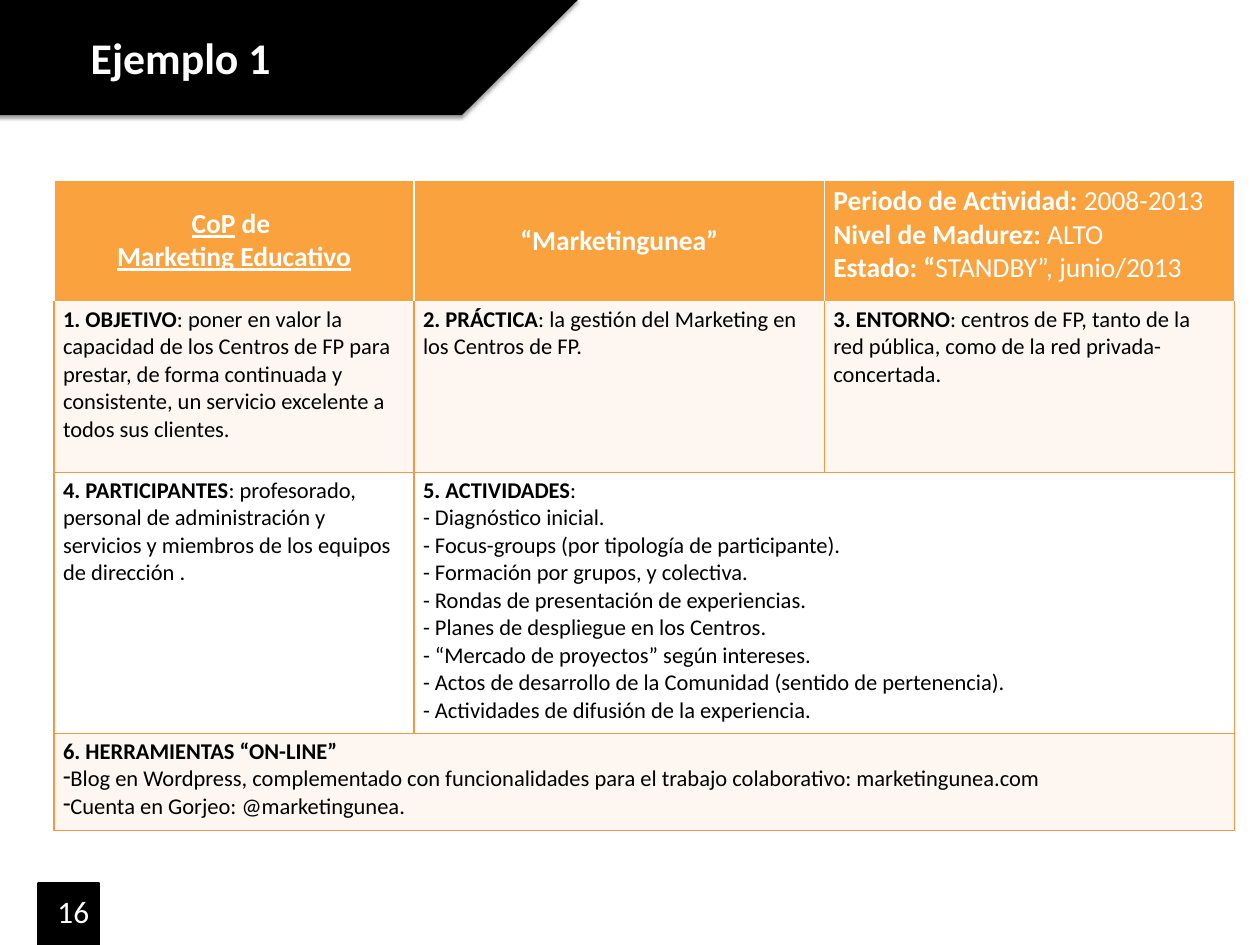
from lxml.etree import SubElement
from pptx import Presentation
from pptx.dml.color import RGBColor
from pptx.enum.shapes import MSO_SHAPE
from pptx.enum.text import MSO_ANCHOR, PP_ALIGN
from pptx.oxml.ns import qn
from pptx.util import Inches, Pt

UNIT = Inches(0.1)
COLS, ROWS = 140, 105
BLACK, WHITE, AMBER, ORANGE, PEACH = "000000", "FFFFFF", "FAA23E", "F79646", "FCD5B5"
FONT = "Calibri"

HEADINGS = [
    [[("CoP", "bu"), (" de ", "b"), ("\n", ""), ("Marketing Educativo", "bu")]],
    [[("“Marketingunea”", "b")]],
    [[("Periodo de Actividad: ", "b"), ("2008-2013", "")],
     [("Nivel de Madurez: ", "b"), ("ALTO", "")],
     [("Estado: “", "b"), ("STANDBY”, junio/2013", "")]],
]
ACTIVITIES = [
    "Diagnóstico inicial.",
    "Focus-groups (por tipología de participante).",
    "Formación por grupos, y colectiva.",
    "Rondas de presentación de experiencias.",
    "Planes de despliegue en los Centros.",
    "“Mercado de proyectos” según intereses.",
    "Actos de desarrollo de la Comunidad (sentido de pertenencia).",
    "Actividades de difusión de la experiencia.",
]
TOOLS = [
    "Blog en Wordpress, complementado con funcionalidades para el trabajo "
    "colaborativo: marketingunea.com",
    "Cuenta en Gorjeo: @marketingunea.",
]
SECTIONS = {
    (1, 0): [[("1. OBJETIVO", "b"), (": poner en valor la capacidad de los Centros de FP "
              "para prestar, de forma continuada y consistente, un servicio excelente "
              "a todos sus clientes.", "")]],
    (1, 1): [[("2. PRÁCTICA", "b"), (": la gestión del Marketing en los Centros de FP.", "")]],
    (1, 2): [[("3. ENTORNO", "b"), (": centros de FP, tanto de la red pública, como de la "
              "red privada-concertada.", "")]],
    (2, 0): [[("4. PARTICIPANTES", "b"), (": profesorado, personal de administración y "
              "servicios y miembros de los equipos de dirección .", "")]],
    (2, 1): [[("5. ACTIVIDADES", "b"), (":", "")]] + [[("- " + a, "")] for a in ACTIVITIES],
    (3, 0): [[("6. HERRAMIENTAS “ON-LINE”", "b")]] + [[(t, "")] for t in TOOLS],
}


def rgb(value):
    """Turn a hex string into a colour."""
    return RGBColor.from_string(value)


def grid(*cells):
    """Turn grid columns and rows into lengths."""
    return [round(c * UNIT) for c in cells]


def write(tf, paragraphs, size, color, align=None):
    """Fill a text frame with paragraphs of (text, style) runs."""
    for i, runs in enumerate(paragraphs):
        p = tf.add_paragraph() if i else tf.paragraphs[0]
        p.alignment = align
        for text, style in runs:
            if text == "\n":
                p.add_line_break()
                continue
            r = p.add_run()
            r.text = text
            r.font.name, r.font.size = FONT, Pt(size)
            r.font.color.rgb = rgb(color)
            r.font.bold, r.font.underline = "b" in style, "u" in style


def add_label(slide, box, text, size, style=""):
    """Add a one-line white text box."""
    tf = slide.shapes.add_textbox(*grid(*box)).text_frame
    tf.word_wrap = True
    write(tf, [[(text, style)]], size, WHITE)


def add_block(slide, preset, box):
    """Add a plain black shape."""
    sp = slide.shapes.add_shape(preset, *grid(*box))
    sp.shadow.inherit = False
    sp.fill.solid()
    sp.fill.fore_color.rgb = rgb(BLACK)
    return sp


def add_banner(slide, box, title):
    """Draw the slanted title banner with its soft shadow."""
    x, y, w, h = box
    sp = add_block(slide, MSO_SHAPE.PARALLELOGRAM, box)
    sp.adjustments[0] = 1.007
    sp.line.fill.background()
    effects = sp._element.spPr.find(qn("a:effectLst"))
    shadow = SubElement(effects, qn("a:outerShdw"), blurRad=str(Pt(3.1)),
                        dist=str(Pt(1.6)), dir="5400000", rotWithShape="0")
    color = SubElement(shadow, qn("a:srgbClr"), val=BLACK)
    SubElement(color, qn("a:alpha"), val="38000")
    add_label(slide, (x + 27.1, y + 3, 52, 6.9), title, 35, "b")


def add_page_number(slide, box, number):
    """Draw the page number on its black square."""
    x, y, w, h = box
    sp = add_block(slide, MSO_SHAPE.RECTANGLE, box)
    sp.line.color.rgb = rgb(BLACK)
    sp.line.width = Pt(2)
    add_label(slide, (x + 1.1, y + 0.6, 32.7, 5.6), number, 25)


def style_cell(cell, fill, top, others, alpha=100):
    """Set the borders and fill of a table cell."""
    tcPr = cell._tc.get_or_add_tcPr()
    for side, color in zip("LRTB", (others, others, top, others)):
        ln = SubElement(tcPr, qn("a:ln" + side), w=str(Pt(1)))
        SubElement(SubElement(ln, qn("a:solidFill")), qn("a:srgbClr"), val=color)
    if fill is None:
        cell.fill.background()
        return
    cell.fill.solid()
    cell.fill.fore_color.rgb = rgb(fill)
    if alpha < 100:
        color = tcPr.find(qn("a:solidFill")).find(qn("a:srgbClr"))
        SubElement(color, qn("a:alpha"), val=str(alpha * 1000))


def add_dash(p):
    """Give a paragraph a dash bullet without indent."""
    pPr = p._p.get_or_add_pPr()
    pPr.set("marL", "0")
    pPr.set("indent", "0")
    SubElement(pPr, qn("a:buFontTx"))
    SubElement(pPr, qn("a:buChar"), char="-")


def add_summary(slide, box, widths, heights):
    """Build the table that describes the community."""
    table = slide.shapes.add_table(len(heights), len(widths), *grid(*box)).table
    table.first_row = table.horz_banding = False
    for column, width in zip(table.columns, grid(*widths)):
        column.width = width
    for row, height in zip(table.rows, grid(*heights)):
        row.height = height
    for c, heading in enumerate(HEADINGS):
        cell = table.cell(0, c)
        style_cell(cell, AMBER, WHITE, WHITE)
        centred = c < 2
        cell.vertical_anchor = MSO_ANCHOR.MIDDLE if centred else MSO_ANCHOR.TOP
        write(cell.text_frame, heading, 22, WHITE, PP_ALIGN.CENTER if centred else None)
    for r in range(1, len(heights)):
        for c in range(len(widths)):
            style_cell(table.cell(r, c), PEACH if r % 2 else None,
                       WHITE if r == 1 else ORANGE, ORANGE, 20)
    table.cell(2, 1).merge(table.cell(2, 2))
    table.cell(3, 0).merge(table.cell(3, 2))
    for (r, c), paragraphs in SECTIONS.items():
        write(table.cell(r, c).text_frame, paragraphs, 18, BLACK)
    for p in table.cell(3, 0).text_frame.paragraphs[1:]:
        add_dash(p)


def main():
    """Build and save the slide."""
    prs = Presentation()
    prs.slide_width, prs.slide_height = grid(COLS, ROWS)
    slide = prs.slides.add_slide(prs.slide_layouts[6])
    add_page_number(slide, (4.3, 98.1, 6.7, 6.9), "16")
    add_summary(slide, (6, 20, 131.2, 72.3), (40, 45.6, 45.6), (13.5, 19, 29, 10.8))
    add_banner(slide, (-18, -0.1, 82.3, 12.9), "Ejemplo 1")
    prs.save("out.pptx")


if __name__ == "__main__":
    main()
